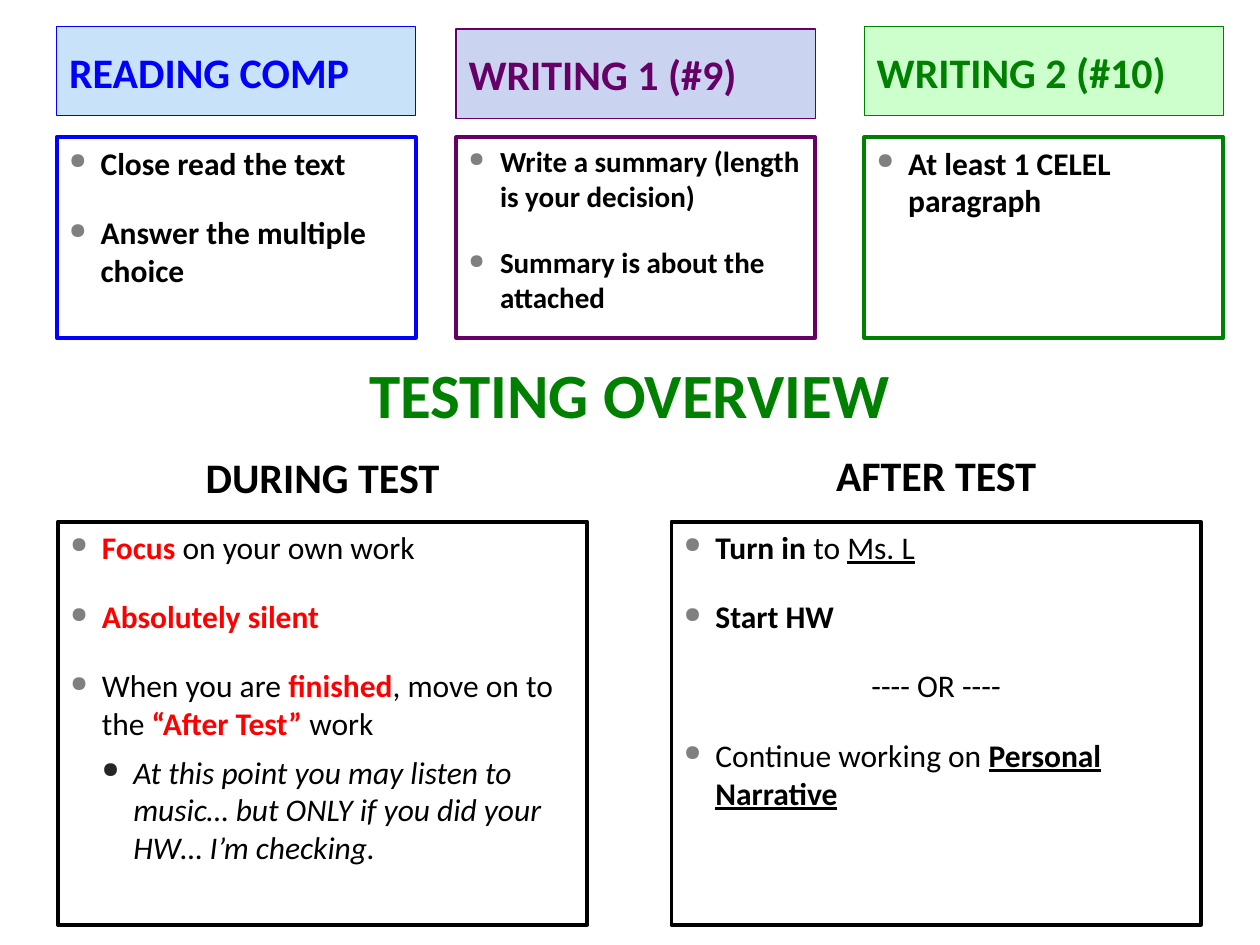
from dataclasses import dataclass

from lxml.etree import SubElement
from pptx import Presentation
from pptx.dml.color import RGBColor
from pptx.enum.shapes import MSO_SHAPE
from pptx.enum.text import MSO_ANCHOR, PP_ALIGN
from pptx.oxml.ns import qn
from pptx.util import Inches, Pt


@dataclass(frozen=True)
class Theme:
    font: str = "Calibri"
    black: str = "000000"
    white: str = "FFFFFF"
    red: str = "FF0000"
    blue: str = "0000FF"
    purple: str = "660066"
    green: str = "008000"
    pale_blue: str = "C8E2FA"
    pale_purple: str = "CAD3F0"
    pale_green: str = "CCFFCC"
    bullet: str = "808080"
    sub_bullet: str = "262626"
    title_size: float = 36
    heading_size: float = 24
    body_size: float = 18
    tight_size: float = 16.6


class OverviewSlide:
    """Draws headings, filled labels and bulleted panels on one slide."""

    def __init__(self, slide, theme):
        self.slide = slide
        self.theme = theme

    def style(self, run, size, color, bold=False, italic=False, underline=False):
        font = run.font
        font.name, font.size = self.theme.font, Pt(size)
        font.color.rgb = RGBColor.from_string(color)
        font.bold, font.italic, font.underline = bold, italic, underline

    def heading(self, text, place, size, color, anchor=MSO_ANCHOR.MIDDLE):
        frame = self.slide.shapes.add_textbox(*map(Inches, place)).text_frame
        frame.word_wrap = True
        frame.vertical_anchor = anchor
        frame.text = text
        frame.paragraphs[0].alignment = PP_ALIGN.CENTER
        self.style(frame.paragraphs[0].runs[0], size, color, bold=True)

    def box(self, place, fill, outline, weight, anchor):
        shape = self.slide.shapes.add_shape(MSO_SHAPE.RECTANGLE, *map(Inches, place))
        shape.shadow.inherit = False
        shape.fill.solid()
        shape.fill.fore_color.rgb = RGBColor.from_string(fill)
        shape.line.color.rgb = RGBColor.from_string(outline)
        shape.line.width = Pt(weight)
        shape.text_frame.word_wrap = True
        shape.text_frame.vertical_anchor = anchor
        return shape.text_frame

    def label(self, text, place, fill, color):
        frame = self.box(place, fill, color, 0.75, MSO_ANCHOR.MIDDLE)
        frame.text = text
        frame.paragraphs[0].alignment = PP_ALIGN.LEFT
        self.style(frame.paragraphs[0].runs[0], self.theme.heading_size, color, bold=True)

    def bullet(self, paragraph, level):
        props = paragraph._p.get_or_add_pPr()
        props.set("marL", str(Inches(0.25 * (level + 1))))
        props.set("indent", str(Inches(-0.25)))
        color = self.theme.sub_bullet if level else self.theme.bullet
        SubElement(SubElement(props, qn("a:buClr")), qn("a:srgbClr")).set("val", color)
        SubElement(props, qn("a:buSzPct")).set("val", "70000")
        SubElement(props, qn("a:buChar")).set("char", "●")

    def panel(self, items, place, outline, size):
        frame = self.box(place, self.theme.white, outline, 2.25, MSO_ANCHOR.TOP)
        for index, (level, pieces) in enumerate(items):
            paragraph = frame.paragraphs[0] if index == 0 else frame.add_paragraph()
            if level is None:
                paragraph.alignment = PP_ALIGN.CENTER
            else:
                paragraph.level = level
                paragraph.alignment = PP_ALIGN.LEFT
                self.bullet(paragraph, level)
            if index:
                paragraph.space_before = Pt(6 if level else 18)
            for text, marks in pieces:
                run = paragraph.add_run()
                run.text = text
                color = self.theme.red if "r" in marks else self.theme.black
                self.style(run, size, color, "b" in marks, "i" in marks, "u" in marks)


def main():
    theme = Theme()
    deck = Presentation()
    deck.slide_width, deck.slide_height = Inches(10), Inches(7.5)
    overview = OverviewSlide(deck.slides.add_slide(deck.slide_layouts[6]), theme)

    overview.heading("TESTING OVERVIEW", (0.45, 2.22, 9.09, 1.25),
                     theme.title_size, theme.green, MSO_ANCHOR.BOTTOM)

    during = [
        (0, [("Focus ", "br"), ("on your own work", "")]),
        (0, [("Absolutely silent", "br")]),
        (0, [("When you are ", ""), ("finished", "br"), (", move on to the ", ""),
             ("“After Test” ", "br"), ("work", "")]),
        (1, [("At this point you may listen to music… but ONLY if you did your "
              "HW… I’m checking.", "i")]),
    ]
    after = [
        (0, [("Turn in ", "b"), ("to ", ""), ("Ms. L", "u")]),
        (0, [("Start HW", "b")]),
        (None, [("---- OR ----", "")]),
        (0, [("Continue working on ", ""), ("Personal Narrative", "bu")]),
    ]
    stages = [
        ("DURING TEST", 0.46, 3.43, during),
        ("AFTER TEST", 5.33, 3.41, after),
    ]
    for name, left, top, steps in stages:
        overview.heading(name, (left, top, 4.2, 0.71), theme.heading_size, theme.black)
        overview.panel(steps, (left, 4.14, 4.2, 3.2), theme.black, theme.body_size)

    sections = [
        ("READING COMP", 0.45, 0.21, theme.pale_blue, theme.blue, theme.body_size,
         ["Close read the text", "Answer the multiple choice"]),
        ("WRITING 1 (#9)", 3.62, 0.23, theme.pale_purple, theme.purple, theme.tight_size,
         ["Write a summary (length is your decision)", "Summary is about the attached"]),
        ("WRITING 2 (#10)", 6.86, 0.21, theme.pale_green, theme.green, theme.body_size,
         ["At least 1 CELEL paragraph"]),
    ]
    for name, left, top, fill, color, size, tasks in sections:
        overview.label(name, (left, top, 2.85, 0.71), fill, color)
        overview.panel([(0, [(task, "b")]) for task in tasks],
                       (left, 1.09, 2.85, 1.59), color, size)

    deck.save("out.pptx")


if __name__ == "__main__":
    main()
